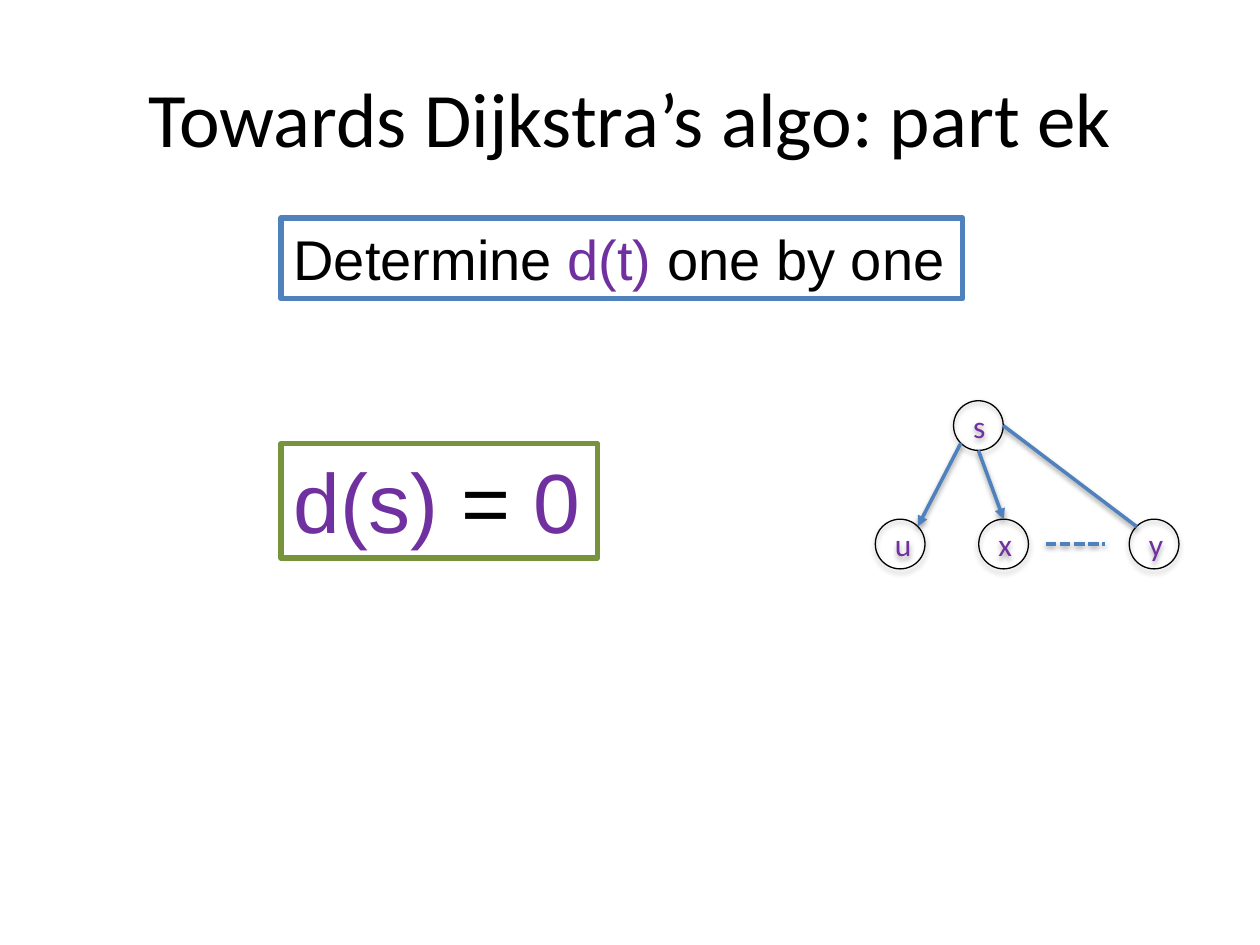
import math
from dataclasses import dataclass

from lxml import etree
from pptx import Presentation
from pptx.dml.color import RGBColor
from pptx.enum.dml import MSO_LINE
from pptx.enum.shapes import MSO_CONNECTOR, MSO_SHAPE
from pptx.enum.text import MSO_ANCHOR, MSO_AUTO_SIZE, PP_ALIGN
from pptx.oxml.ns import qn
from pptx.util import Pt

ELLIPSE = MSO_SHAPE.OVAL
STRAIGHT = MSO_CONNECTOR.STRAIGHT
DASH = MSO_LINE.SQUARE_DOT
CENTER = PP_ALIGN.CENTER
MIDDLE = MSO_ANCHOR.MIDDLE
GROW = MSO_AUTO_SIZE.SHAPE_TO_FIT_TEXT


@dataclass(frozen=True)
class Theme:
    black: RGBColor = RGBColor(0x00, 0x00, 0x00)
    blue: RGBColor = RGBColor(0x4F, 0x81, 0xBD)
    green: RGBColor = RGBColor(0x77, 0x93, 0x3C)
    purple: RGBColor = RGBColor(0x70, 0x30, 0xA0)
    heading_font: str = "Calibri"
    box_font: str = "Arial"
    title_size: int = 44
    statement_size: int = 32
    result_size: int = 48
    node_size: int = 18


THEME = Theme()
NODE_DIAMETER = 28.4
ROOT_Y, CHILD_Y = 243.2, 310.9
NODE_CENTERS = {
    "s": (559.1, ROOT_Y),
    "u": (514.4, CHILD_Y),
    "x": (573.5, CHILD_Y),
    "y": (659.5, CHILD_Y),
}
# start node, start angle, end node, end angle (clockwise from the right), arrowhead
EDGES = [
    ("s", 135, "u", -45, True),
    ("s", 90, "x", -90, True),
    ("s", 0, "y", -135, False),
]


def style_run(run, font, size, color):
    run.font.name = font
    run.font.size = Pt(size)
    run.font.color.rgb = color


def set_shadow(shape, distance, opacity):
    """Cast a soft black shadow straight down."""
    effects = etree.SubElement(shape._element.spPr, qn("a:effectLst"))
    shadow = etree.SubElement(
        effects, qn("a:outerShdw"), blurRad=str(Pt(3.1)), dist=str(Pt(distance)),
        dir="5400000", rotWithShape="0")
    color = etree.SubElement(shadow, qn("a:srgbClr"), val=str(THEME.black))
    etree.SubElement(color, qn("a:alpha"), val=str(opacity * 1000))


def add_title(slide, text):
    shape = slide.shapes.add_textbox(Pt(36), Pt(21.6), Pt(648), Pt(90))
    frame = shape.text_frame
    frame.word_wrap = True
    frame.vertical_anchor = MIDDLE
    frame.text = text
    paragraph = frame.paragraphs[0]
    paragraph.alignment = CENTER
    style_run(paragraph.runs[0], THEME.heading_font, THEME.title_size, THEME.black)


def add_framed_text(slide, top, width, height, border, size, parts):
    shape = slide.shapes.add_textbox(Pt(160.6), Pt(top), Pt(width), Pt(height))
    shape.line.color.rgb = border
    shape.line.width = Pt(3)
    frame = shape.text_frame
    frame.word_wrap = False
    frame.auto_size = GROW
    for text, color in parts:
        run = frame.paragraphs[0].add_run()
        run.text = text
        style_run(run, THEME.box_font, size, color)


def add_node(slide, name):
    x, y = NODE_CENTERS[name]
    radius = NODE_DIAMETER / 2
    shape = slide.shapes.add_shape(
        ELLIPSE, Pt(x - radius), Pt(y - radius), Pt(NODE_DIAMETER), Pt(NODE_DIAMETER))
    shape.fill.background()
    shape.line.color.rgb = THEME.black
    shape.line.width = Pt(0.75)
    set_shadow(shape, 1.8, 35)
    frame = shape.text_frame
    frame.vertical_anchor = MIDDLE
    frame.text = name
    paragraph = frame.paragraphs[0]
    paragraph.alignment = CENTER
    style_run(paragraph.runs[0], THEME.heading_font, THEME.node_size, THEME.purple)


def rim_point(name, degrees):
    x, y = NODE_CENTERS[name]
    angle = math.radians(degrees)
    radius = NODE_DIAMETER / 2
    return x + radius * math.cos(angle), y + radius * math.sin(angle)


def add_line(slide, start, end, arrow=False, dash=None):
    line = slide.shapes.add_connector(STRAIGHT, *(Pt(value) for value in (*start, *end)))
    line.line.color.rgb = THEME.blue
    line.line.width = Pt(2)
    if dash is not None:
        line.line.dash_style = dash
    if arrow:
        etree.SubElement(line.line._get_or_add_ln(), qn("a:tailEnd"), type="triangle")
    set_shadow(line, 1.6, 38)


def add_graph(slide):
    for name in NODE_CENTERS:
        add_node(slide, name)
    for start, start_angle, end, end_angle, arrow in EDGES:
        add_line(slide, rim_point(start, start_angle), rim_point(end, end_angle), arrow)
    add_line(slide, (597.6, CHILD_Y), (631.4, CHILD_Y), dash=DASH)


def main():
    presentation = Presentation()
    presentation.slide_width = Pt(720)
    presentation.slide_height = Pt(540)
    slide = presentation.slides.add_slide(presentation.slide_layouts[6])
    add_title(slide, "Towards Dijkstra’s algo: part ek")
    add_framed_text(
        slide, 124.6, 389.5, 46.1, THEME.blue, THEME.statement_size,
        [("Determine ", THEME.black), ("d(t)", THEME.purple), (" one by one", THEME.black)])
    add_graph(slide)
    add_framed_text(
        slide, 253.4, 180.7, 65.5, THEME.green, THEME.result_size,
        [("d(s) ", THEME.purple), ("= ", THEME.black), ("0", THEME.purple)])
    presentation.save("out.pptx")


if __name__ == "__main__":
    main()
